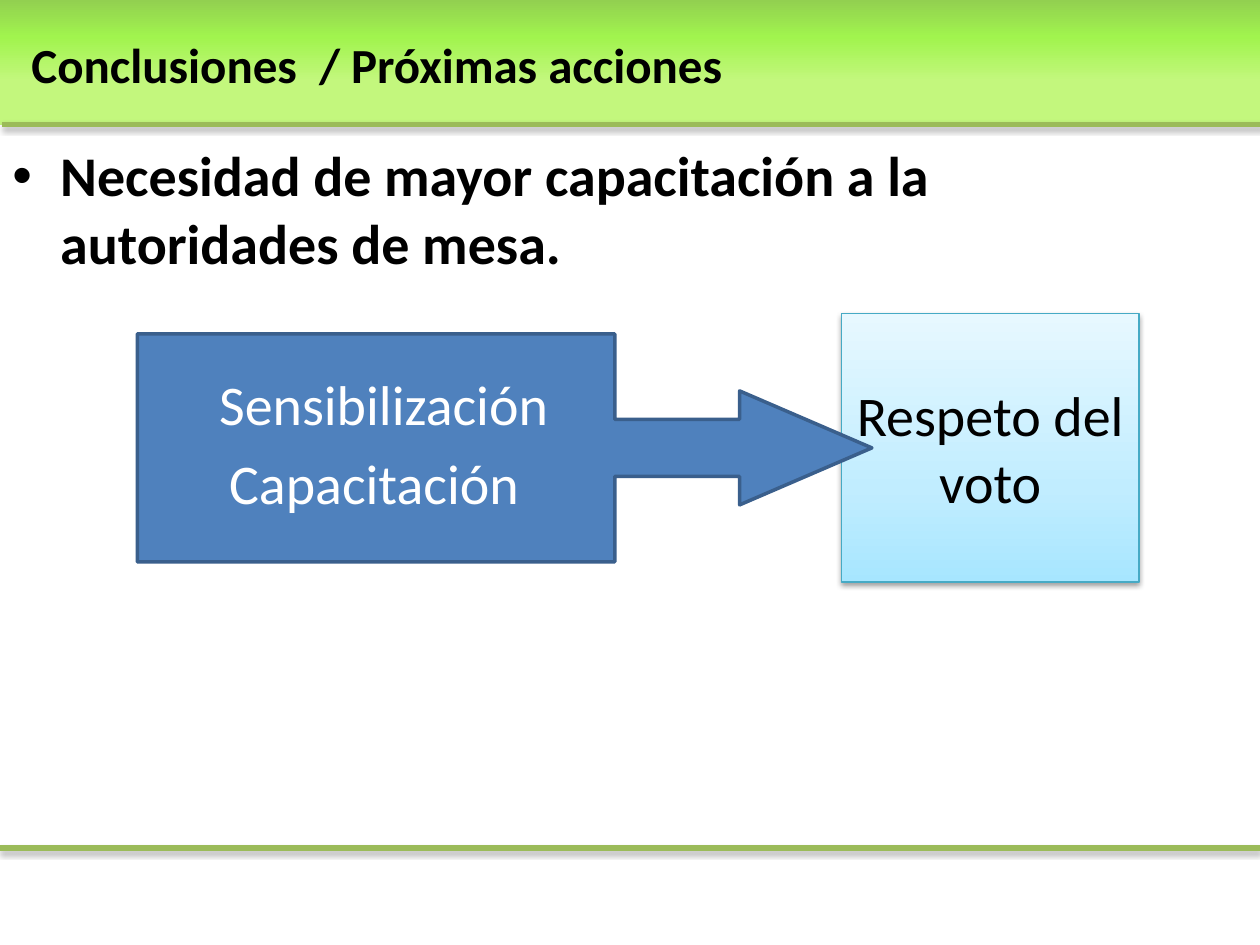
import pptx
import pptx.dml.color
import pptx.enum.shapes
import pptx.enum.text
import pptx.oxml.ns
import pptx.util
from lxml import etree

Inches = pptx.util.Inches
Pt = pptx.util.Pt
RGBColor = pptx.dml.color.RGBColor
MSO_SHAPE = pptx.enum.shapes.MSO_SHAPE
MSO_ANCHOR = pptx.enum.text.MSO_ANCHOR
PP_ALIGN = pptx.enum.text.PP_ALIGN
qn = pptx.oxml.ns.qn

BLACK = RGBColor(0x00, 0x00, 0x00)
WHITE = RGBColor(0xFF, 0xFF, 0xFF)
RULE_GREEN = RGBColor(0x9B, 0xBB, 0x59)
CALLOUT_BLUE = RGBColor(0x4F, 0x81, 0xBD)
CALLOUT_EDGE = RGBColor(0x3A, 0x5F, 0x8C)
RESULT_EDGE = RGBColor(0x46, 0xAA, 0xC5)
BAND_STOPS = [
    (0, RGBColor(0x92, 0xD0, 0x50)),
    (30, RGBColor(0xA1, 0xF4, 0x4E)),
    (65, RGBColor(0xC3, 0xF7, 0x7D)),
]
RESULT_STOPS = [
    (0, RGBColor(0xA7, 0xE6, 0xFF)),
    (35, RGBColor(0xC1, 0xED, 0xFF)),
    (100, RGBColor(0xE7, 0xF8, 0xFF)),
]
FONT = "Calibri"


def set_gradient(shape, stops, angle):
    shape.fill.gradient()
    shape.fill.gradient_angle = angle
    stop_list = shape.element.spPr.find(".//" + qn("a:gsLst"))
    for old_stop in list(stop_list):
        stop_list.remove(old_stop)
    for position, color in stops:
        stop = etree.SubElement(stop_list, qn("a:gs"), pos=str(position * 1000))
        etree.SubElement(stop, qn("a:srgbClr"), val=str(color))


def add_shadow(effects, distance, opacity):
    shadow = etree.SubElement(
        effects, qn("a:outerShdw"), blurRad=str(Pt(3.1)), dist=str(Pt(distance)),
        dir="5400000", rotWithShape="0")
    color = etree.SubElement(shadow, qn("a:srgbClr"), val=str(BLACK))
    etree.SubElement(color, qn("a:alpha"), val=str(opacity * 1000))


def add_rule(slide, left, top):
    rule = slide.shapes.add_connector(
        pptx.enum.shapes.MSO_CONNECTOR.STRAIGHT,
        Inches(left), Inches(top), Inches(left + 10), Inches(top))
    rule.line.color.rgb = RULE_GREEN
    rule.line.width = Pt(3)
    effects = etree.SubElement(rule.element.spPr, qn("a:effectLst"))
    add_shadow(effects, 1.8, 35)


def add_shape(slide, kind, box, edge=None, edge_width=0):
    shape = slide.shapes.add_shape(kind, *map(Inches, box))
    shape.shadow.inherit = False
    if edge is None:
        shape.line.fill.background()
    else:
        shape.line.color.rgb = edge
        shape.line.width = Pt(edge_width)
    return shape


def write_text(shape, text, color=BLACK, size=32, bold=False,
               align=PP_ALIGN.LEFT, bullet=False):
    frame = shape.text_frame
    frame.word_wrap = True
    paragraph = frame.paragraphs[0]
    paragraph.text = text
    paragraph.alignment = align
    if bullet:
        properties = paragraph._p.get_or_add_pPr()
        properties.set("marL", str(Inches(0.38)))
        properties.set("indent", str(Inches(-0.38)))
        etree.SubElement(properties, qn("a:buFont"), typeface="Arial")
        etree.SubElement(properties, qn("a:buChar"), char="•")
    font = paragraph.font
    font.name = FONT
    font.size = Pt(size)
    font.bold = bold
    font.color.rgb = color


def add_text(slide, box, text, **style):
    text_box = slide.shapes.add_textbox(*map(Inches, box))
    write_text(text_box, text, **style)
    return text_box


def add_title(slide, text):
    title = add_text(slide, (0.12, -0.12, 8.94, 1.25), text, size=28, bold=True)
    frame = title.text_frame
    frame.vertical_anchor = MSO_ANCHOR.MIDDLE
    frame.margin_left = Inches(0.13)
    frame.margin_top = frame.margin_right = frame.margin_bottom = Inches(0.04)


def add_result(slide, text):
    result = add_shape(slide, MSO_SHAPE.RECTANGLE, (6.68, 2.49, 2.36, 2.13),
                       RESULT_EDGE, 0.75)
    set_gradient(result, RESULT_STOPS, 90)
    add_shadow(result.element.spPr.find(qn("a:effectLst")), 1.6, 38)
    result.text_frame.vertical_anchor = MSO_ANCHOR.MIDDLE
    write_text(result, text, align=PP_ALIGN.CENTER)


def add_callout(slide):
    callout = add_shape(slide, MSO_SHAPE.RIGHT_ARROW_CALLOUT,
                        (1.09, 2.65, 5.83, 1.81), CALLOUT_EDGE, 2)
    callout.fill.solid()
    callout.fill.fore_color.rgb = CALLOUT_BLUE
    for index, value in enumerate((0.25, 0.25, 0.58, 0.65)):
        callout.adjustments[index] = value


def main():
    presentation = pptx.Presentation()
    presentation.slide_width = Inches(10)
    presentation.slide_height = Inches(7.5)
    slide = presentation.slides.add_slide(presentation.slide_layouts[6])

    band = add_shape(slide, MSO_SHAPE.RECTANGLE, (0, 0, 10, 0.99))
    set_gradient(band, BAND_STOPS, 270)
    add_rule(slide, 0, 6.73)
    add_rule(slide, 0.02, 0.99)

    add_result(slide, "Respeto del voto")
    add_callout(slide)
    add_title(slide, "Conclusiones  / Próximas acciones")
    add_text(slide, (0, 1.07, 9.33, 3.54),
             "Necesidad de mayor capacitación a la autoridades de mesa.",
             bold=True, bullet=True)
    add_text(slide, (1.64, 2.88, 2.99, 0.64), "Sensibilización", color=WHITE)
    add_text(slide, (1.72, 3.51, 2.99, 0.64), "Capacitación", color=WHITE)

    presentation.save("out.pptx")


if __name__ == "__main__":
    main()
